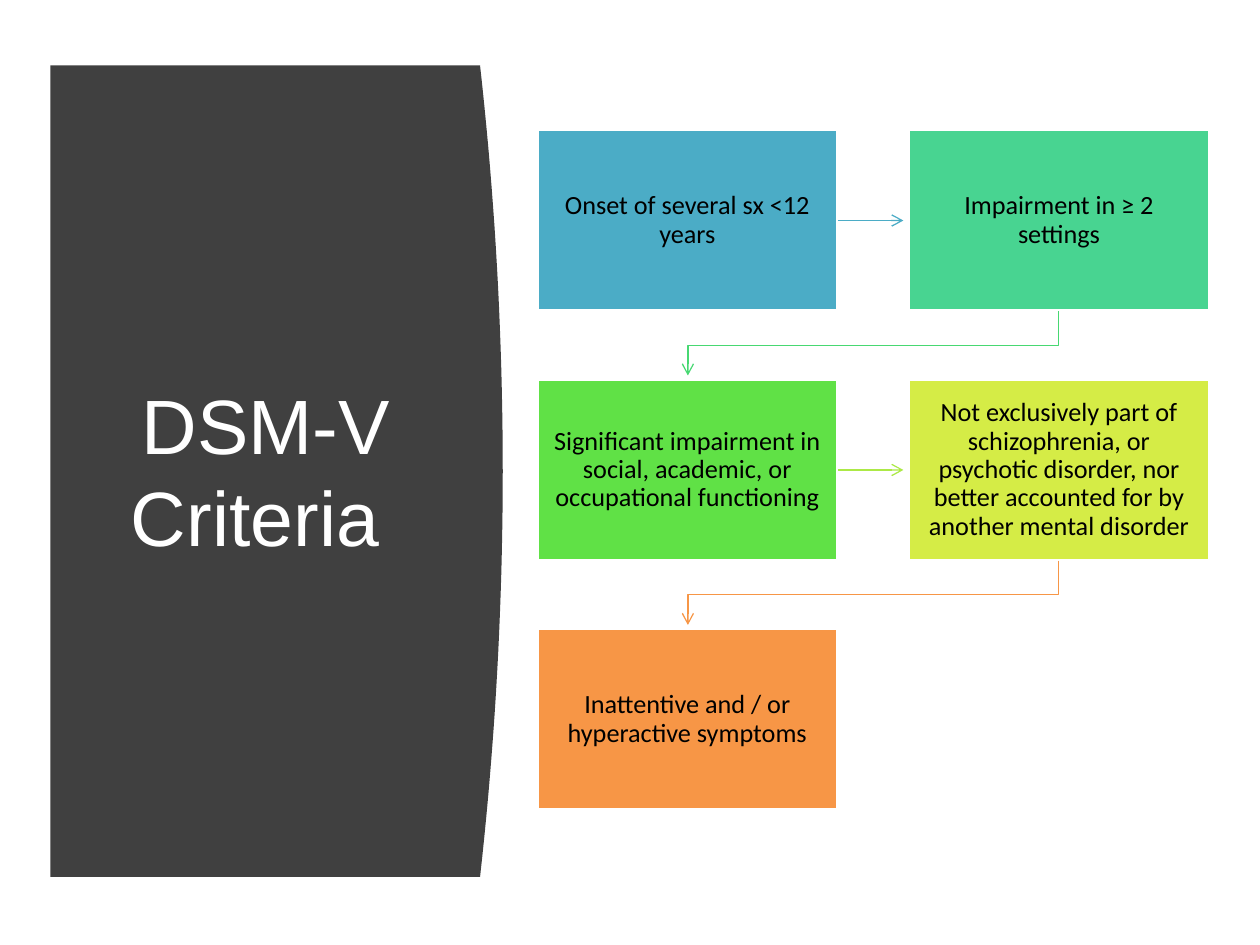
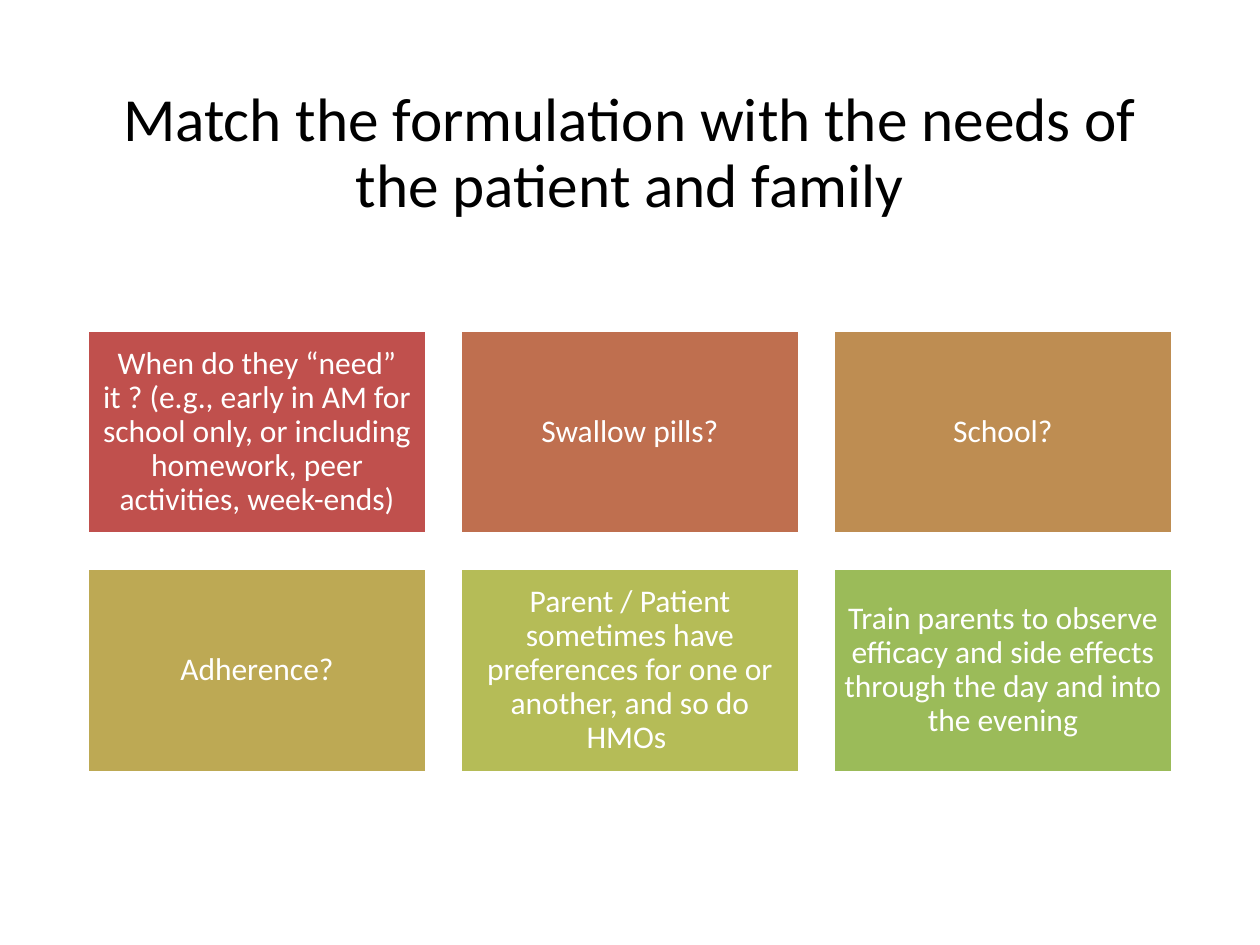
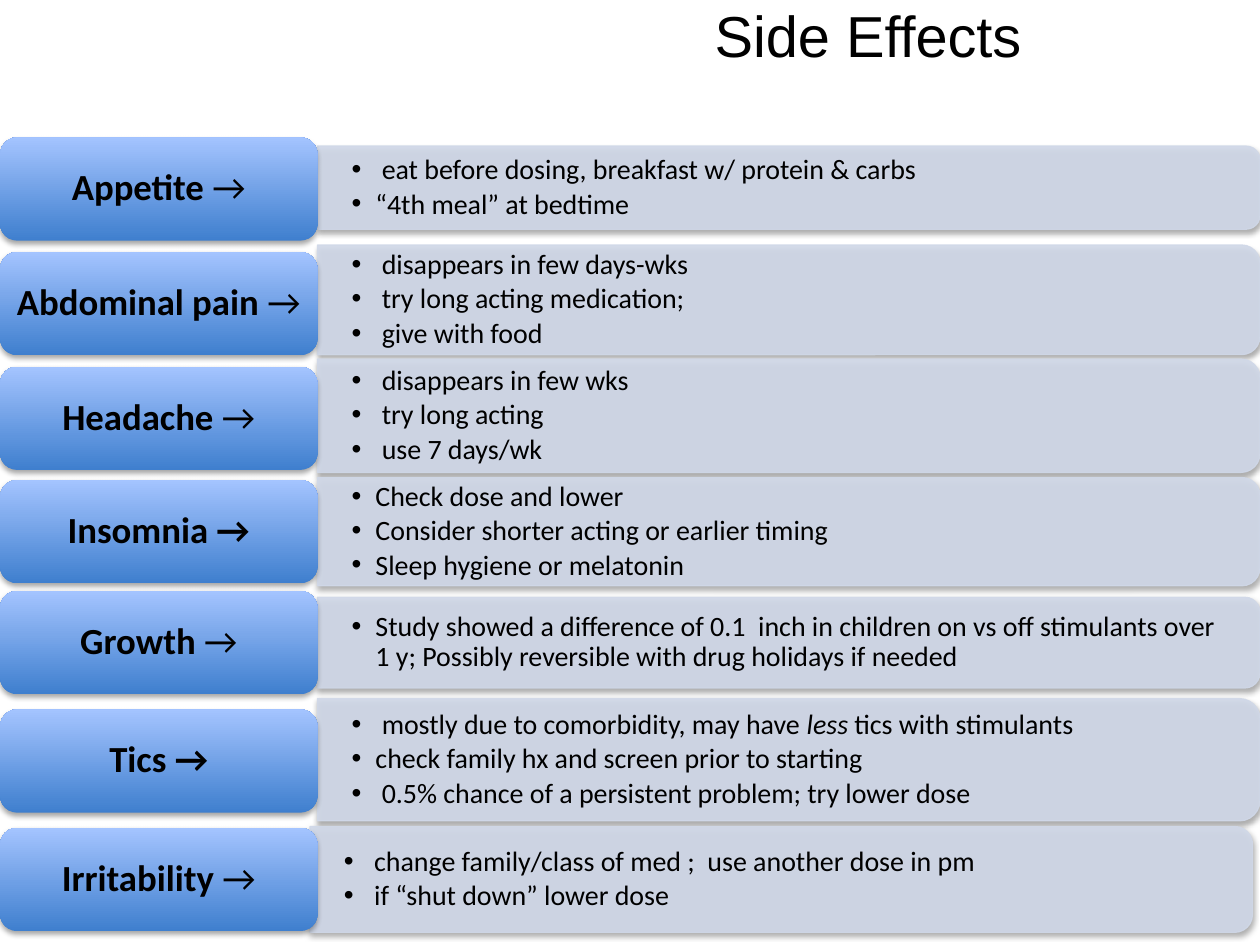
from lxml.etree import SubElement
from pptx import Presentation
from pptx.dml.color import RGBColor as RGB
from pptx.enum.shapes import MSO_CONNECTOR as Link, MSO_SHAPE as Kind
from pptx.enum.text import MSO_ANCHOR as Anchor, MSO_AUTO_SIZE as Fit, PP_ALIGN as Align
from pptx.oxml.ns import qn
from pptx.util import Inches, Pt

INK = {
    "black": "000000", "white": "FFFFFF", "panel": "404040",
    "blue": "4BACC6", "mint": "48D491", "green": "60E146", "lime": "D5EC46", "orange": "F79646",
    "leaf": "47D872", "moss": "ACE946",
    "red": "C0504D", "rust": "BF6F4F", "tan": "BE8D52", "gold": "BDA954", "olive": "B5BC57", "grass": "9BBB59",
    "pale": "D0D8E8", "deep": "3F7FCE", "sky": "A4C4FF",
}
INK = {name: RGB.from_string(code) for name, code in INK.items()}


def write(shape, paras, size, color="black", font="Calibri", pad=(0.1, 0.05), gap=0, lead=0.9, dots=False):
    frame = shape.text_frame
    frame.word_wrap = True
    frame.auto_size = Fit.NONE
    frame.vertical_anchor = Anchor.MIDDLE
    frame.margin_left = frame.margin_right = Inches(pad[0])
    frame.margin_top = frame.margin_bottom = Inches(pad[1])
    for i, runs in enumerate(paras):
        para = frame.add_paragraph() if i else frame.paragraphs[0]
        para.line_spacing = lead
        para.space_after = Pt(gap)
        para.alignment = Align.LEFT if dots else Align.CENTER
        if dots:
            para.level = 1
            props = para._p.get_or_add_pPr()
            props.set("marL", str(Inches(0.19)))
            props.set("indent", str(Inches(-0.19)))
            SubElement(props, qn("a:buFont"), typeface="Arial")
            SubElement(props, qn("a:buChar"), char="•")
        para.font.size = Pt(size)
        para.font.name = font
        para.font.color.rgb = INK[color]
        for words, style in [(runs, "")] if isinstance(runs, str) else runs:
            run = para.add_run()
            run.text = words
            if style == "b":
                run.font.bold = True
            if style == "i":
                run.font.italic = True


def block(slide, kind, spot, fill, edge=None, width=2, shade=False):
    shape = slide.shapes.add_shape(kind, *map(Inches, spot))
    shape.shadow.inherit = False
    shape.fill.solid()
    shape.fill.fore_color.rgb = INK[fill]
    if edge:
        shape.line.color.rgb = INK[edge]
        shape.line.width = Pt(width)
    else:
        shape.line.fill.background()
    if shade:
        drop = SubElement(shape._element.spPr.find(qn("a:effectLst")), qn("a:outerShdw"),
                          blurRad=str(Pt(3.1)), dist=str(Pt(1.8)), dir="5400000", rotWithShape="0")
        tint = SubElement(drop, qn("a:srgbClr"), val=str(INK["black"]))
        SubElement(tint, qn("a:alpha"), val="35000")
    return shape


deck = Presentation()
deck.slide_width, deck.slide_height = Inches(10), Inches(7.5)

heads = [
    ("DSM-V Criteria ", (0.71, 1.11, 2.8, 5.24), 44, "white", "Arial", 1),
    ("Match the formulation with the needs of the patient and family", (0.69, 0.61, 8.62, 1.24), 35, "black", "Calibri", 0.9),
    ("Side Effects", (4.55, 0, 4.68, 0.61), 33, "black", "Arial", 0.9),
]
slides = []
for words, spot, size, color, font, lead in heads:
    slide = deck.slides.add_slide(deck.slide_layouts[5])
    title = slide.shapes.title
    title.left, title.top, title.width, title.height = map(Inches, spot)
    write(title, [words], size, color, font, lead=lead)
    slides.append(slide)
dsm, match, side = slides

top, tall, steps = 0.52, 6.44, 40
curve = [(3.81 + 0.72 * t * (1 - t), top + tall * t) for t in (n / steps for n in range(steps + 1))]
pen = dsm.shapes.build_freeform(Inches(0.4), Inches(top), 1)
pen.add_line_segments([(Inches(x), Inches(y)) for x, y in curve + [(0.4, top + tall)]])
panel = pen.convert_to_shape()
panel.shadow.inherit = False
panel.fill.solid()
panel.fill.fore_color.rgb = INK["panel"]
panel.line.fill.background()
dsm.shapes._spTree.insert(2, panel._element)

tests = [
    ("Onset of several sx <12 years", "blue", "blue"),
    ("Impairment in ≥ 2 settings", "mint", "leaf"),
    ("Significant impairment in social, academic, or occupational functioning", "green", "moss"),
    ("Not exclusively part of schizophrenia, or psychotic disorder, nor better accounted for by another mental disorder", "lime", "orange"),
    ("Inattentive and / or hyperactive symptoms", "orange", None),
]
for i, (words, fill, tone) in enumerate(tests):
    x, y = 4.26 + 2.95 * (i % 2), 1.03 + 1.98 * (i // 2)
    box = block(dsm, Kind.RECTANGLE, (x, y, 2.39, 1.44), fill, "white")
    write(box, [words], 15, pad=(0.12, 0.12), gap=5.25)
    if not tone:
        continue
    if i % 2 == 0:
        mid = Inches(y + 0.72)
        arrow = dsm.shapes.add_connector(Link.STRAIGHT, Inches(x + 2.39), mid, Inches(7.17), mid)
        arrow.begin_connect(box, 3)
        SubElement(arrow._element.spPr, qn("a:effectLst"))
    else:
        bend = [(8.4, y + 1.71), (5.46, y + 1.71), (5.46, y + 1.95)]
        pen = dsm.shapes.build_freeform(Inches(8.4), Inches(y + 1.44), 1)
        pen.add_line_segments([(Inches(a), Inches(b)) for a, b in bend], close=False)
        arrow = pen.convert_to_shape()
        arrow.shadow.inherit = False
        arrow.fill.background()
    arrow.line.color.rgb = INK[tone]
    arrow.line.width = Pt(0.75)
    SubElement(arrow._element.spPr.find(qn("a:ln")), qn("a:tailEnd"), type="arrow")

needs = [
    ("When do they “need” it ? (e.g., early in AM for school only, or including homework, peer activities, week-ends)", "red"),
    ("Swallow pills?", "rust"),
    ("School?", "tan"),
    ("Adherence?", "gold"),
    ("Parent / Patient sometimes have preferences for one or another, and so do HMOs ", "olive"),
    ("Train parents to observe efficacy and side effects through the day and into the evening", "grass"),
]
for i, (words, fill) in enumerate(needs):
    spot = (0.69 + 2.96 * (i % 3), 2.62 + 1.89 * (i // 3), 2.7, 1.62)
    box = block(match, Kind.RECTANGLE, spot, fill, "white")
    write(box, [words], 18, "white", pad=(0.07, 0.07), gap=6.3)

effects = [
    ("Appetite ", "", 1.09, 2.52, 1.49, 0.66,
     [" eat before dosing, breakfast w/ protein & carbs", "“4th meal” at bedtime"]),
    ("Abdominal pain ", "", 2, 2.52, 2.38, 0.87,
     [" disappears in few days-wks", " try long acting medication;", " give with food"]),
    ("Headache ", "", 2.91, 2.52, 3.3, 0.9,
     [" disappears in few wks", " try long acting", " use 7 days/wk"]),
    ("Insomnia ", "b", 3.81, 2.52, 4.22, 0.86,
     ["Check dose and lower", "Consider shorter acting or earlier timing", "Sleep hygiene or melatonin"]),
    ("Growth ", "", 4.69, 2.52, 5.1, 0.72,
     ["Study showed a difference of 0.1  inch in children on vs off stimulants over 1 y; Possibly reversible with drug holidays if needed"]),
    ("Tics ", "b", 5.63, 2.52, 6.03, 0.97,
     [[(" mostly due to comorbidity, may have ", ""), ("less", "i"), (" tics with stimulants", "")],
      "check family hx and screen prior to starting", " 0.5% chance of a persistent problem; try lower dose"]),
    ("Irritability ", "", 6.57, 2.46, 6.98, 0.84,
     [" change family/class of med ;  use another dose in pm", " if “shut down” lower dose"]),
]
long = 7.48
for name, style, y, left, mid, high, tips in effects:
    spot = (left + (long - high) / 2, mid - long / 2, high, long)
    bar = block(side, Kind.ROUND_2_SAME_RECTANGLE, spot, "pale", "pale", 0.75, True)
    bar.rotation = 90
    for tint in bar._element.spPr.iter(qn("a:srgbClr")):
        if tint.get("val") == str(INK["pale"]):
            SubElement(tint, qn("a:alpha"), val="90000")
    spot = (left, mid - high / 2 + 0.04, 7.44, high - 0.08)
    note = side.shapes.add_textbox(*map(Inches, spot))
    write(note, tips, 16, pad=(0.27, 0.14), gap=2.4, dots=True)
    label = block(side, Kind.ROUNDED_RECTANGLE, (0, y, 2.52, 0.82), "deep", shade=True)
    label.fill.gradient()
    label.fill.gradient_angle = 90
    for stop, tone in zip(label.fill.gradient_stops, ("deep", "sky")):
        stop.color.rgb = INK[tone]
    write(label, [[(name, "b"), ("→", style)]], 21, pad=(0.09, 0.04), gap=7.35)

deck.save("out.pptx")
